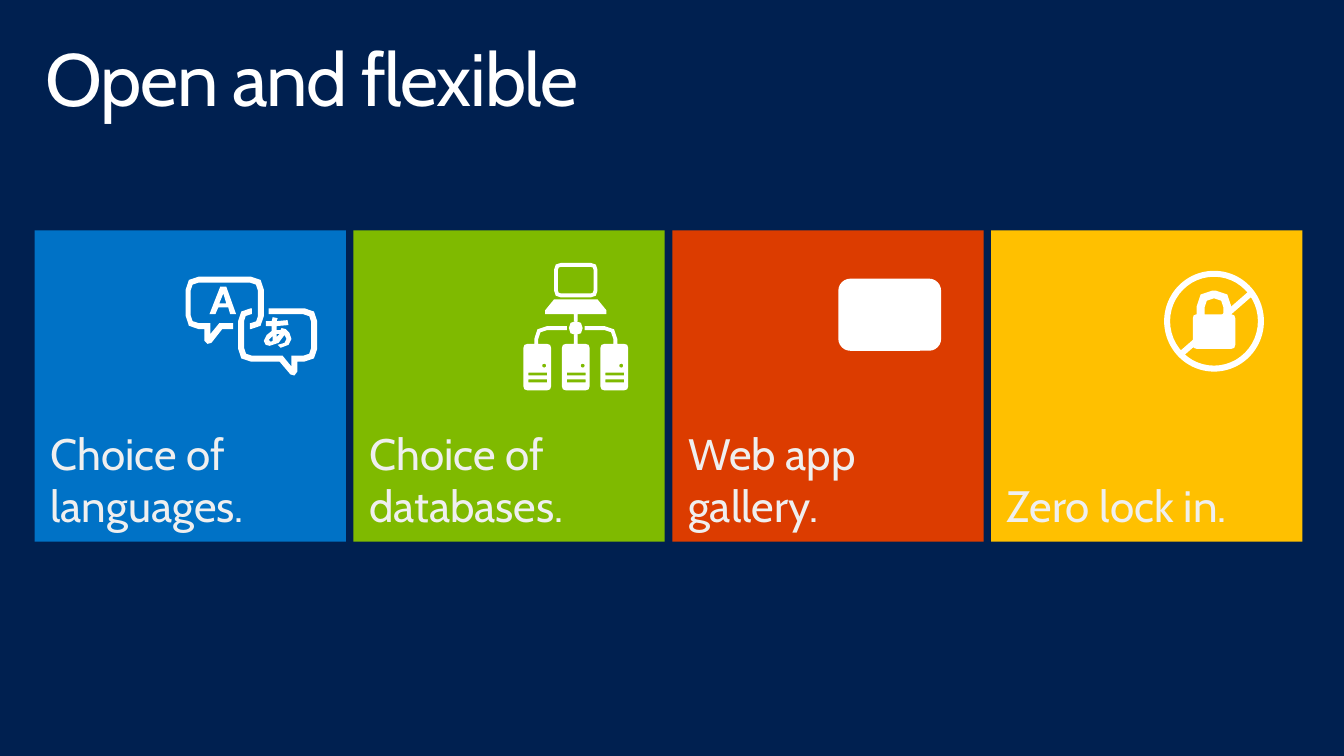
from math import dist
from pptx import Presentation
from pptx.dml.color import RGBColor
from pptx.enum import shapes as sh, text as tx
from pptx.oxml import ns
from pptx.util import Inches, Pt

HUES = {"navy": "002050", "blue": "0072C6", "green": "7FBA00", "red": "DC3C00",
        "gold": "FFC000", "white": "FFFFFF", "pale": "EFEFEF"}
KIND = sh.MSO_SHAPE
FONT = "Cabin"


def hue(name):
    return RGBColor.from_string(HUES[name])


def paint(item, fill):
    item.shadow.inherit = False
    item.fill.solid()
    item.fill.fore_color.rgb = hue(fill)
    item.line.fill.background()


def part(slide, box, kind, x, y, w, h, fill="white"):
    left, top = box
    item = slide.shapes.add_shape(
        kind, Inches(left + x), Inches(top + y), Inches(w), Inches(h))
    paint(item, fill)
    return item


def curve(prior, point, after):
    x, y, size = point
    ends = []
    for near in (prior, after):
        share = size / dist((x, y), near[:2])
        ends.append((x + (near[0] - x) * share, y + (near[1] - y) * share))
    (ax, ay), (bx, by) = ends
    return [ends[0], ((ax + bx) / 4 + x / 2, (ay + by) / 4 + y / 2), ends[1]]


def soften(points):
    path = []
    for n, point in enumerate(points):
        if len(point) == 3:
            path += curve(points[n - 1], point, points[(n + 1) % len(points)])
        else:
            path.append(point)
    return path


def draw(slide, box, loops):
    left, top = box
    pen = None
    for loop in loops:
        spots = [(Inches(left + x), Inches(top + y)) for x, y in soften(loop)]
        if pen:
            pen.move_to(*spots[0])
        else:
            pen = slide.shapes.build_freeform(*spots[0])
        pen.add_line_segments(spots[1:], close=True)
    paint(pen.convert_to_shape(), "white")


def block(x, y, w, h, bend=0):
    ends = [(x, y), (x + w, y), (x + w, y + h), (x, y + h)]
    return [(*end, bend) for end in ends] if bend else ends


def speech(slide, box):
    left = [(0.25, 0.58), (0.25, 0.47), (0.05, 0.47, 0.08), (0.05, 0.06, 0.08),
            (0.73, 0.06, 0.08), (0.73, 0.47, 0.07), (0.65, 0.47), (0.65, 0.53),
            (0.79, 0.53, 0.13), (0.79, 0, 0.13), (0, 0, 0.13), (0, 0.53, 0.13),
            (0.19, 0.53), (0.19, 0.65), (0.22, 0.68), (0.26, 0.67), (0.37, 0.53),
            (0.48, 0.53), (0.48, 0.47), (0.34, 0.47)]
    right = [(0.84, 0.32), (0.84, 0.38), (1.27, 0.38, 0.08), (1.27, 0.8, 0.08),
             (1.07, 0.8), (1.07, 0.91), (0.98, 0.8), (0.59, 0.8, 0.08),
             (0.59, 0.38, 0.07), (0.67, 0.38), (0.67, 0.32), (0.53, 0.32, 0.13),
             (0.53, 0.86, 0.13), (0.95, 0.86), (1.06, 0.99), (1.1, 1),
             (1.13, 0.96), (1.13, 0.86), (1.33, 0.86, 0.13), (1.33, 0.32, 0.13)]
    latin = [(0.35, 0.1), (0.24, 0.38), (0.3, 0.38), (0.33, 0.31), (0.43, 0.31),
             (0.45, 0.38), (0.51, 0.38), (0.41, 0.1)]
    kana = [(0.79, 0.65), (0.81, 0.69), (0.85, 0.7), (0.94, 0.67), (1, 0.59),
            (1.02, 0.63), (1, 0.67), (0.93, 0.69), (0.96, 0.72), (1.04, 0.69),
            (1.07, 0.63), (1.05, 0.57), (1.01, 0.53), (0.97, 0.52), (0.96, 0.54),
            (0.92, 0.54), (0.92, 0.5), (1.04, 0.49), (1.03, 0.44), (0.92, 0.45),
            (0.93, 0.42), (0.88, 0.41), (0.87, 0.45), (0.81, 0.45), (0.81, 0.5),
            (0.87, 0.5), (0.87, 0.55), (0.82, 0.59)]
    holes = [[(0.34, 0.27), (0.38, 0.17), (0.41, 0.27)],
             [(0.95, 0.58), (0.92, 0.61), (0.92, 0.58)],
             [(0.88, 0.6), (0.88, 0.65), (0.86, 0.66), (0.84, 0.64)]]
    x, y = box
    draw(slide, (x + 1.53, y + 0.47), [left, right, latin, kana, *holes])


def servers(slide, box):
    arm = [(0.11, 0.82), (0.11, 0.64, 0.13), (0.44, 0.64), (0.44, 0.68),
           (0.15, 0.68, 0.09), (0.15, 0.82)]
    loops = [block(0.31, 0, 0.44, 0.35, 0.07), block(0.35, 0.04, 0.36, 0.27, 0.03),
             [(0.31, 0.37), (0.75, 0.37), (0.84, 0.48), (0.84, 0.52),
              (0.22, 0.52), (0.22, 0.48)],
             block(0.51, 0.52, 0.04, 0.07), block(0.46, 0.59, 0.14, 0.14, 0.07),
             block(0.51, 0.73, 0.04, 0.09),
             arm, [(1.06 - x, *rest) for x, *rest in arm]]
    for step in range(3):
        x = step * 0.39
        loops += [block(x, 0.82, 0.28, 0.47, 0.04),
                  block(x + 0.19, 1.02, 0.04, 0.04, 0.02)]
        loops += [block(x + 0.05, y, 0.19, 0.03) for y in (1.11, 1.18)]
    x, y = box
    draw(slide, (x + 1.72, y + 0.33), loops)


def gallery(slide, box):
    part(slide, box, KIND.ROUNDED_RECTANGLE, 1.68, 0.49, 1.04, 0.73)


def lock(slide, box):
    ring = part(slide, box, KIND.DONUT, 1.75, 0.41, 1.01, 1.02)
    ring.adjustments[0] = 0.06
    body = [(0, 0.24, 0.04), (0.04, 0.24), (0.04, 0, 0.16), (0.39, 0, 0.16),
            (0.39, 0.24), (0.43, 0.24, 0.04), (0.43, 0.59, 0.04), (0, 0.59, 0.04)]
    hole = [(0.12, 0.24), (0.12, 0.08, 0.09), (0.31, 0.08, 0.09), (0.31, 0.24)]
    x, y = box
    draw(slide, (x + 2.04, y + 0.61), [body, hole])
    slash = part(slide, box, KIND.RECTANGLE, 1.79, 0.92, 0.96, 0.06)
    slash.rotation = 319


def write(frame, label, size, color):
    frame.text = label
    frame.word_wrap = True
    frame.margin_left = frame.margin_right = Inches(0.16)
    frame.margin_top = frame.margin_bottom = Inches(0.1)
    para = frame.paragraphs[0]
    para.alignment = tx.PP_ALIGN.LEFT
    run = para.runs[0]
    run.font.name = FONT
    run.font.size = Pt(size)
    run.font.color.rgb = hue(color)
    return para


def tile(slide, box, size, label, color, icon):
    frame = part(slide, box, KIND.RECTANGLE, 0, 0, size, size, color).text_frame
    frame.vertical_anchor = tx.MSO_ANCHOR.BOTTOM
    write(frame, label, 32, "pale").space_after = Pt(8)
    icon(slide, box)


def header(slide, box, label):
    title = slide.shapes.title
    title.left, title.top, title.width, title.height = map(Inches, box)
    frame = title.text_frame
    frame.auto_size = tx.MSO_AUTO_SIZE.NONE
    frame.vertical_anchor = tx.MSO_ANCHOR.TOP
    para = write(frame, label, 54, "white")
    para.line_spacing = 0.9
    para.runs[0]._r.find(ns.qn("a:rPr")).set("spc", "-100")


def main():
    deck = Presentation()
    deck.slide_width, deck.slide_height = Inches(13.6), Inches(7.65)
    slide = deck.slides.add_slide(deck.slide_layouts[5])
    slide.background.fill.solid()
    slide.background.fill.fore_color.rgb = hue("navy")
    header(slide, (0.3, 0.33, 13, 1), "Open and flexible")
    tiles = [("Choice of languages.", "blue", speech),
             ("Choice of databases.", "green", servers),
             ("Web app gallery.", "red", gallery),
             ("Zero lock in.", "gold", lock)]
    first, last = 0.35, 10.03
    pitch = (last - first) / (len(tiles) - 1)
    for n, (label, color, icon) in enumerate(tiles):
        tile(slide, (first + n * pitch, 2.33), 3.15, label, color, icon)
    deck.save("out.pptx")


if __name__ == "__main__":
    main()
